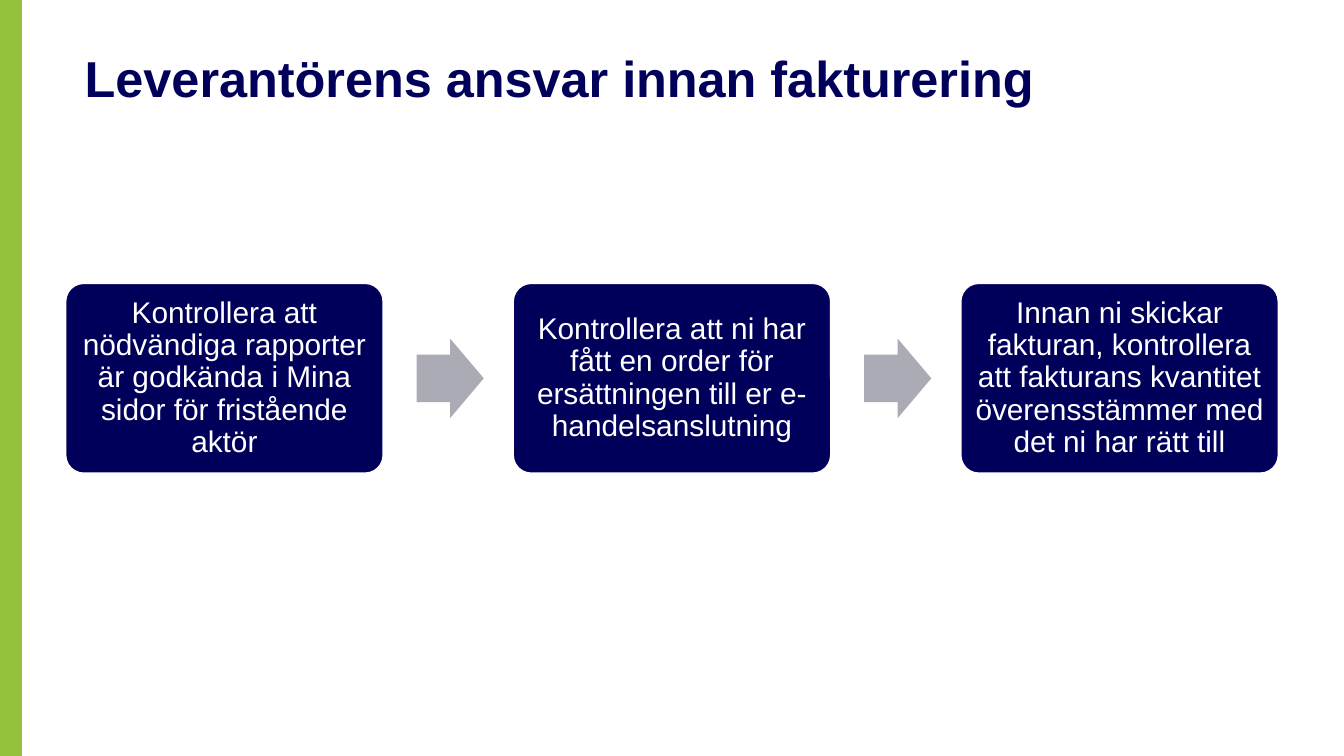
import pptx
import pptx.util
import pptx.dml.color
import pptx.enum.shapes
import pptx.enum.text

Inches = pptx.util.Inches
Pt = pptx.util.Pt
SHAPES = pptx.enum.shapes.MSO_SHAPE
NAVY, WHITE, GREEN, GREY = "00005A", "FFFFFF", "95C23D", "ABABB5"


def color(hex_value):
    return pptx.dml.color.RGBColor.from_string(hex_value)


def add_block(kind, left, top, width, height, fill):
    block = slide.shapes.add_shape(
        kind, Inches(left), Inches(top), Inches(width), Inches(height))
    block.shadow.inherit = False
    block.fill.solid()
    block.fill.fore_color.rgb = color(fill)
    block.line.fill.background()
    return block


presentation = pptx.Presentation()
presentation.slide_width = Inches(10)
presentation.slide_height = Inches(10) * 9 // 16
slide = presentation.slides.add_slide(presentation.slide_layouts[6])

side_band = add_block(SHAPES.RECTANGLE, 0, 0, 0.16, 5.63, GREEN)
side_band.line.color.rgb = color(GREEN)
side_band.line.width = Pt(1)

heading = slide.shapes.add_textbox(Inches(0.63), Inches(0.35), Inches(8.12), Inches(0.74))
heading_frame = heading.text_frame
heading_frame.word_wrap = True
heading_frame.margin_left = heading_frame.margin_right = 0
heading_frame.margin_top = heading_frame.margin_bottom = 0
heading_frame.text = "Leverantörens ansvar innan fakturering"
heading_font = heading_frame.paragraphs[0].runs[0].font
heading_font.name = "Arial"
heading_font.size = Pt(27)
heading_font.bold = True
heading_font.color.rgb = color(NAVY)

steps = [
    "Kontrollera att nödvändiga rapporter är godkända i Mina sidor för fristående aktör",
    "Kontrollera att ni har fått en order för ersättningen till er e-handelsanslutning",
    "Innan ni skickar fakturan, kontrollera att fakturans kvantitet "
    "överensstämmer med det ni har rätt till",
]
first_left, step_pitch = 0.48, 3.33

for index, step_text in enumerate(steps):
    left = first_left + index * step_pitch
    step = add_block(SHAPES.ROUNDED_RECTANGLE, left, 2.1, 2.38, 1.43, NAVY)
    step.adjustments[0] = 0.1
    step.line.color.rgb = color(WHITE)
    step.line.width = Pt(2)

    step_frame = step.text_frame
    step_frame.word_wrap = True
    step_frame.vertical_anchor = pptx.enum.text.MSO_ANCHOR.MIDDLE
    step_frame.margin_left = step_frame.margin_right = Inches(0.07)
    step_frame.margin_top = step_frame.margin_bottom = Inches(0.07)
    step_frame.text = step_text
    paragraph = step_frame.paragraphs[0]
    paragraph.alignment = pptx.enum.text.PP_ALIGN.CENTER
    paragraph.line_spacing = 0.9
    step_font = paragraph.runs[0].font
    step_font.name = "Arial"
    step_font.size = Pt(16)
    step_font.color.rgb = color(WHITE)

    if index < len(steps) - 1:
        arrow = add_block(SHAPES.RIGHT_ARROW, left + 2.62, 2.52, 0.5, 0.59, GREY)
        arrow.adjustments[0] = 0.6
        arrow.adjustments[1] = 0.5

presentation.save("out.pptx")
